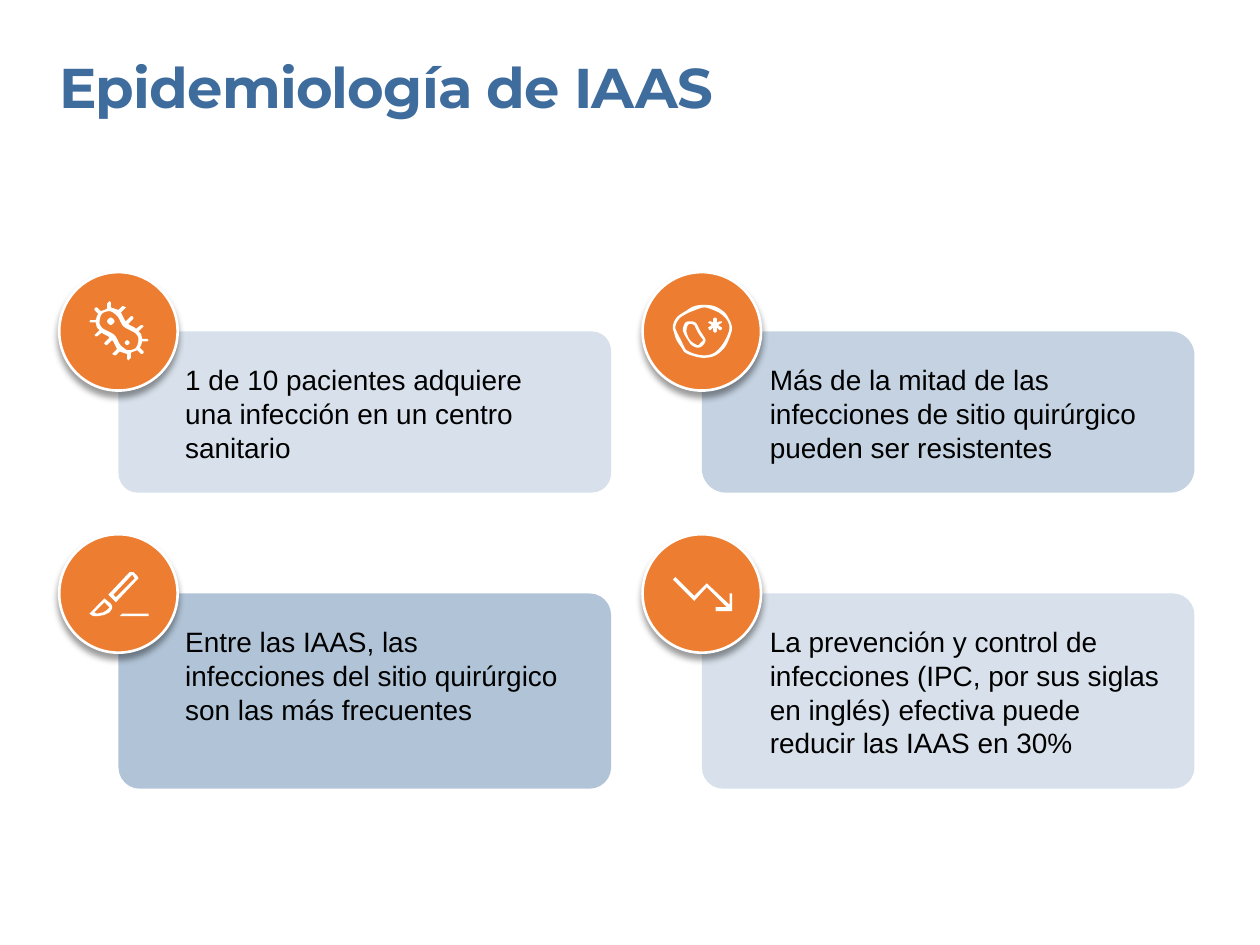
from dataclasses import dataclass

from lxml.etree import SubElement
from pptx import Presentation
from pptx.dml.color import RGBColor
from pptx.enum.shapes import MSO_SHAPE
from pptx.enum.text import MSO_AUTO_SIZE
from pptx.oxml.ns import qn
from pptx.util import Pt

PX = 9144  # EMU per px, 100 px to the inch
BLUE = RGBColor(0x3D, 0x6C, 0x9D)
ORANGE = RGBColor(0xED, 0x7D, 0x31)
WHITE = RGBColor(0xFF, 0xFF, 0xFF)
BLACK = RGBColor(0x00, 0x00, 0x00)

Points = list[tuple[float, float]]


@dataclass
class Contour:
    points: Points
    rounded: bool = False


@dataclass
class Icon:
    top: int  # below the top of the badge
    contours: list[Contour]


@dataclass
class Finding:
    message: str
    column: int
    row: int
    opacity: int
    corner: float
    icon: Icon


def with_half_turn(half: Points, size: int = 47) -> Points:
    """Complete an outline that is symmetric under a half turn."""
    return half + [(size - x, size - y) for x, y in half]


def dot(x: int, y: int, radius: int) -> Contour:
    return Contour([(x + radius, y), (x, y + radius),
                    (x - radius, y), (x, y - radius)], rounded=True)


def round_off(points: Points, steps: int = 4) -> Points:
    """Run a closed Catmull-Rom curve through the points."""
    count = len(points)
    curve = []
    for i in range(count):
        corners = [points[(i + k) % count] for k in (-1, 0, 1, 2)]
        for t in (step / steps for step in range(steps)):
            curve.append(tuple(
                b + t * (c - a) / 2 + t * t * (2 * a - 5 * b + 4 * c - d) / 2
                + t ** 3 * (3 * b - a - 3 * c + d) / 2
                for a, b, c, d in zip(*corners)))
    return curve


# Icons
BACTERIUM = Icon(23, [
    Contour(with_half_turn([
        (30, 46), (30, 42), (27, 41), (24, 40), (21, 43), (20, 43), (18, 42), (19, 41),
        (22, 38), (21, 36), (19, 32), (18, 31), (14, 35), (13, 35), (12, 34), (12, 33),
        (16, 29), (15, 28), (11, 26), (10, 25), (6, 28), (5, 28), (4, 27), (5, 26),
        (8, 23), (6, 21), (5, 17), (1, 17), (0, 16), (1, 15), (5, 15), (6, 12),
        (7, 10), (4, 7), (4, 6), (5, 5), (6, 5), (9, 8), (12, 7), (14, 6),
        (14, 2), (15, 1), (16, 0)])),
    Contour(with_half_turn([
        (31, 39), (37, 37), (39, 30), (37, 26), (34, 24), (30, 22), (27, 20),
        (25, 17), (23, 13), (20, 10)]), rounded=True),
    dot(17, 16, 3), dot(30, 33, 2)])
CELL = Icon(26, [
    Contour([(26, 42), (18, 41), (10, 38), (7, 34), (3, 28), (1, 22), (0, 17),
             (3, 10), (10, 5), (17, 1), (25, 0), (33, 1), (40, 5), (44, 10),
             (47, 18), (45, 26), (41, 34), (34, 40)], rounded=True),
    Contour([(26, 40), (33, 38), (39, 32), (43, 25), (45, 18), (43, 12), (38, 7),
             (32, 4), (25, 2), (18, 4), (11, 7), (5, 11), (2, 17), (3, 21),
             (6, 27), (9, 33), (11, 36), (18, 39)], rounded=True),
    Contour([(20, 34), (24, 32), (26, 28), (24, 24), (22, 21), (20, 17), (18, 14),
             (14, 13), (10, 14), (8, 19), (9, 23), (12, 28), (15, 32)], rounded=True),
    Contour([(20, 32), (16, 30), (13, 27), (11, 22), (11, 19), (12, 16), (14, 15),
             (17, 16), (18, 18), (20, 22), (22, 25), (24, 28), (22, 30)], rounded=True),
    Contour([(34, 22), (35, 21), (35, 18), (37, 20), (38, 20), (39, 19), (39, 18),
             (36, 16), (39, 14), (39, 13), (37, 13), (35, 14), (35, 11), (34, 10),
             (33, 10), (32, 11), (32, 14), (30, 13), (29, 13), (28, 14), (31, 16),
             (28, 18), (29, 20), (30, 20), (32, 18), (32, 21), (33, 22)])])
SCALPEL = Icon(30, [
    Contour([(21, 24), (15, 18), (32, 0), (35, 0), (38, 3), (39, 5), (38, 6)]),
    Contour([(21, 20), (36, 5), (34, 2), (19, 18)]),
    Contour([(24, 35), (26, 33), (47, 33), (47, 35)]),
    Contour([(6, 35), (3, 35), (0, 33), (12, 21), (17, 25), (18, 27), (18, 29),
             (16, 32), (12, 34), (7, 35)]),
    Contour([(6, 33), (11, 32), (14, 30), (16, 28), (15, 27), (12, 24), (4, 32)])])
DECLINE = Icon(34, [
    Contour([(34, 27), (34, 24), (43, 24), (27, 8), (17, 19), (0, 2), (2, 0),
             (17, 15), (27, 5), (45, 22), (45, 13), (47, 13), (47, 27)])])

FINDINGS = [
    Finding("1 de 10 pacientes adquiere una infección en un centro sanitario",
            0, 0, 20, 0.12, BACTERIUM),
    Finding("Más de la mitad de las infecciones de sitio quirúrgico pueden ser resistentes",
            1, 0, 30, 0.15, CELL),
    Finding("Entre las IAAS, las infecciones del sitio quirúrgico son las más frecuentes",
            0, 1, 40, 0.11, SCALPEL),
    Finding("La prevención y control de infecciones (IPC, por sus siglas en inglés) "
            "efectiva puede reducir las IAAS en 30%", 1, 1, 20, 0.11, DECLINE),
]

# Grid
LEFT, TOP = 47, 216
COLUMN_STEP, ROW_STEP = 463, 208
BADGE = 94
CARD_WIDTH, CARD_HEIGHTS = 391, (128, 155)
TEXT_LEFTS, TEXT_WIDTHS = (147, 611), (301, 310)


def corner_of(finding: Finding) -> tuple[int, int]:
    return LEFT + finding.column * COLUMN_STEP, TOP + finding.row * ROW_STEP


def add_solid(slide, kind: MSO_SHAPE, x: int, y: int, w: int, h: int, color: RGBColor):
    shape = slide.shapes.add_shape(kind, x * PX, y * PX, w * PX, h * PX)
    shape.shadow.inherit = False
    shape.fill.solid()
    shape.fill.fore_color.rgb = color
    return shape


def add_card(slide, finding: Finding) -> None:
    x, y = corner_of(finding)
    card = add_solid(slide, MSO_SHAPE.ROUNDED_RECTANGLE, x + 47, y + 47,
                     CARD_WIDTH, CARD_HEIGHTS[finding.row], BLUE)
    card.adjustments[0] = finding.corner
    card.line.fill.background()
    tint = card._element.spPr.find(".//" + qn("a:srgbClr"))
    SubElement(tint, qn("a:alpha"), val=str(finding.opacity * 1000))


def add_badge(slide, x: int, y: int) -> None:
    badge = add_solid(slide, MSO_SHAPE.OVAL, x, y, BADGE, BADGE, ORANGE)
    badge.line.color.rgb = WHITE
    badge.line.width = Pt(1.5)
    effects = badge._element.spPr.find(qn("a:effectLst"))
    shadow = SubElement(effects, qn("a:outerShdw"), blurRad=str(Pt(4)), dist=str(Pt(3)),
                        dir="5400000", algn="t", rotWithShape="0")
    shade = SubElement(shadow, qn("a:srgbClr"), val=str(BLACK))
    SubElement(shade, qn("a:alpha"), val="40000")


def add_icon(slide, icon: Icon, x: int, y: int) -> None:
    builder = None
    for contour in icon.contours:
        points = round_off(contour.points) if contour.rounded else contour.points
        start, *others = [((x + px) * PX, (y + py) * PX) for px, py in points]
        if builder is None:
            builder = slide.shapes.build_freeform(*start, scale=1.0)
        else:
            builder.move_to(*start)
        builder.add_line_segments(others, close=True)
    glyph = builder.convert_to_shape()
    glyph.shadow.inherit = False
    glyph.fill.solid()
    glyph.fill.fore_color.rgb = WHITE
    glyph.line.fill.background()


def add_text(slide, x: int, y: int, w: int, h: int, text: str,
             font: str, size: int, color: RGBColor):
    frame = slide.shapes.add_textbox(x * PX, y * PX, w * PX, h * PX).text_frame
    frame.word_wrap = True
    frame.auto_size = MSO_AUTO_SIZE.SHAPE_TO_FIT_TEXT
    frame.margin_left = frame.margin_right = frame.margin_top = frame.margin_bottom = 0
    run = frame.paragraphs[0].add_run()
    run.text = text
    run.font.name, run.font.size = font, Pt(size)
    run.font.color.rgb = color
    return run


def main() -> None:
    deck = Presentation()
    deck.slide_width, deck.slide_height = 1000 * PX, 750 * PX
    slide = deck.slides.add_slide(deck.slide_layouts[6])

    # Cards behind everything else
    for finding in FINDINGS:
        add_card(slide, finding)

    # Title
    title = add_text(slide, 47, 42, 855, 54, "Epidemiología de IAAS", "Montserrat", 32, BLUE)
    title.font.bold = True
    title._r.get_or_add_rPr().set("spc", "-50")

    # Messages, badges and icons
    for finding in FINDINGS:
        x, y = corner_of(finding)
        height = 108 if finding.icon is DECLINE else 81
        add_text(slide, TEXT_LEFTS[finding.column], y + 72, TEXT_WIDTHS[finding.column],
                 height, finding.message, "Arial", 16, BLACK)
        add_badge(slide, x, y)
        add_icon(slide, finding.icon, x + 24, y + finding.icon.top)

    deck.save("out.pptx")


if __name__ == "__main__":
    main()
